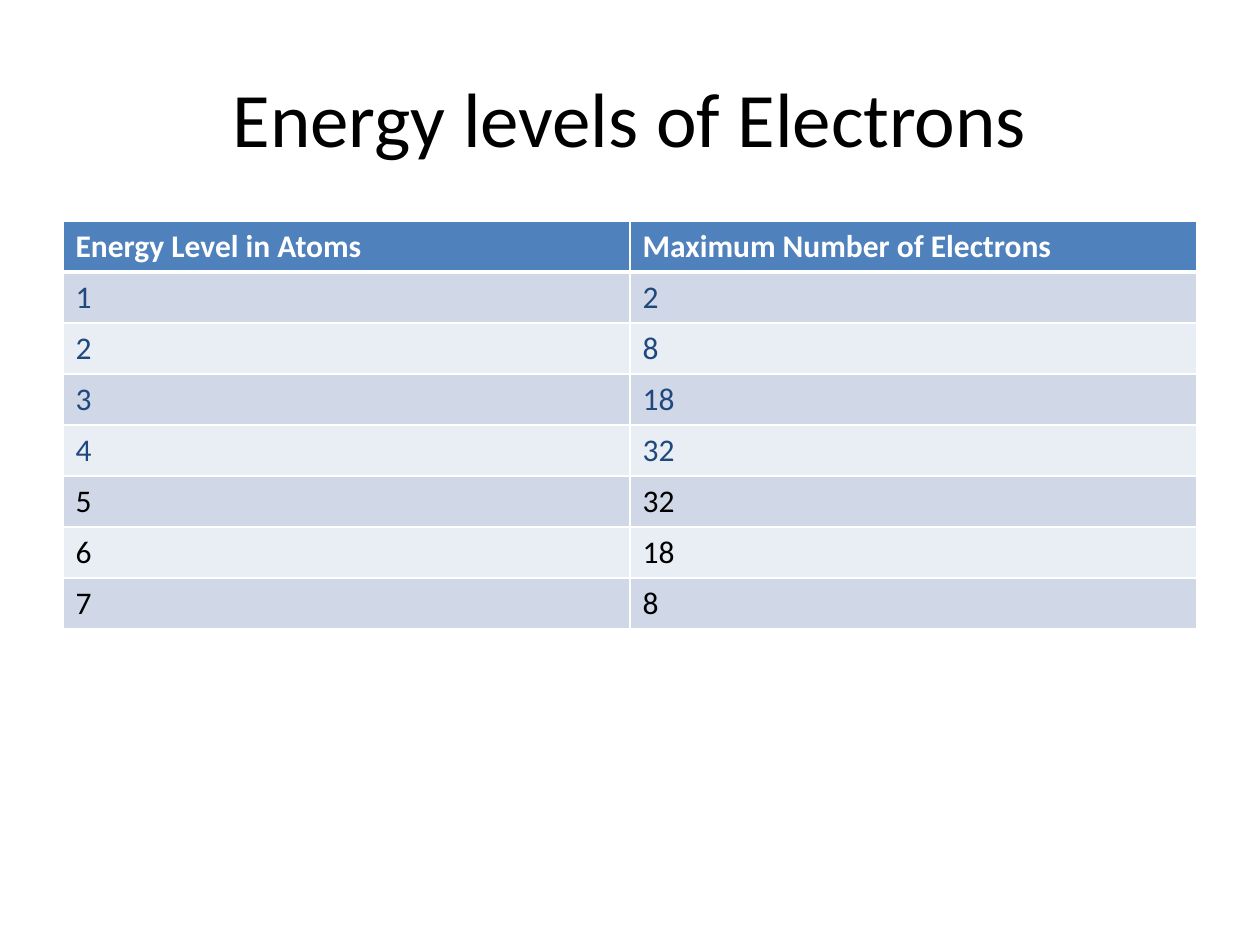
"""Build the slide on energy levels of electrons."""
from lxml import etree
from pptx import Presentation
from pptx.dml.color import RGBColor
from pptx.enum import text
from pptx.oxml import ns
from pptx import util as u

TITLE = "Energy levels of Electrons"
HEADER = ("Energy Level in Atoms", "Maximum Number of Electrons")
LEVELS = [(1, 2), (2, 8), (3, 18), (4, 32), (5, 32), (6, 18), (7, 8)]
LAST_BLUE_LEVEL = 4
BLUE, NAVY, BLACK, WHITE = "4F81BD", "1F497D", "000000", "FFFFFF"
BANDS = ("D0D8E8", "E9EDF4")
LEFT, WIDTH, TABLE_TOP, ROW_HEIGHT = 63, 1134, 221, 51


def px(n):
    return u.Emu(n * 914400 // 126)


def rgb(value):
    return RGBColor.from_string(value)


def write(tf, content, size=18, color=BLACK, bold=False, align=text.PP_ALIGN.LEFT):
    p = tf.paragraphs[0]
    p.alignment = align
    r = p.add_run()
    r.text = str(content)
    r.font.name, r.font.size, r.font.bold = "Calibri", u.Pt(size), bold
    r.font.color.rgb = rgb(color)


def set_borders(cell, top, bottom):
    pr = cell._tc.get_or_add_tcPr()
    sides = (("lnL", 1), ("lnR", 1), ("lnT", top), ("lnB", bottom))
    for i, (side, width) in enumerate(sides):
        ln = etree.Element(ns.qn(f"a:{side}"), w=str(u.Pt(width)))
        fill = etree.SubElement(ln, ns.qn("a:solidFill"))
        etree.SubElement(fill, ns.qn("a:srgbClr"), val=WHITE)
        pr.insert(i, ln)


def add_title(s):
    tf = s.shapes.add_textbox(px(LEFT), px(38), px(WIDTH), px(157)).text_frame
    tf.word_wrap = True
    tf.vertical_anchor = text.MSO_ANCHOR.MIDDLE
    write(tf, TITLE, size=44, align=text.PP_ALIGN.CENTER)


def add_levels(s):
    rows = [HEADER, *LEVELS]
    table = s.shapes.add_table(len(rows), len(HEADER), px(LEFT), px(TABLE_TOP),
                               px(WIDTH), px(ROW_HEIGHT * len(rows))).table
    for i, row in enumerate(rows):
        head = i == 0
        fill = BLUE if head else BANDS[(i - 1) % 2]
        color = WHITE if head else NAVY if i <= LAST_BLUE_LEVEL else BLACK
        for j, value in enumerate(row):
            cell = table.cell(i, j)
            cell.fill.solid()
            cell.fill.fore_color.rgb = rgb(fill)
            set_borders(cell, top=3 if i == 1 else 1, bottom=3 if head else 1)
            write(cell.text_frame, value, color=color, bold=head)


def main():
    prs = Presentation()
    prs.slide_width, prs.slide_height = px(1260), px(945)
    s = prs.slides.add_slide(prs.slide_layouts[6])
    add_title(s)
    add_levels(s)
    prs.save("out.pptx")


if __name__ == "__main__":
    main()
